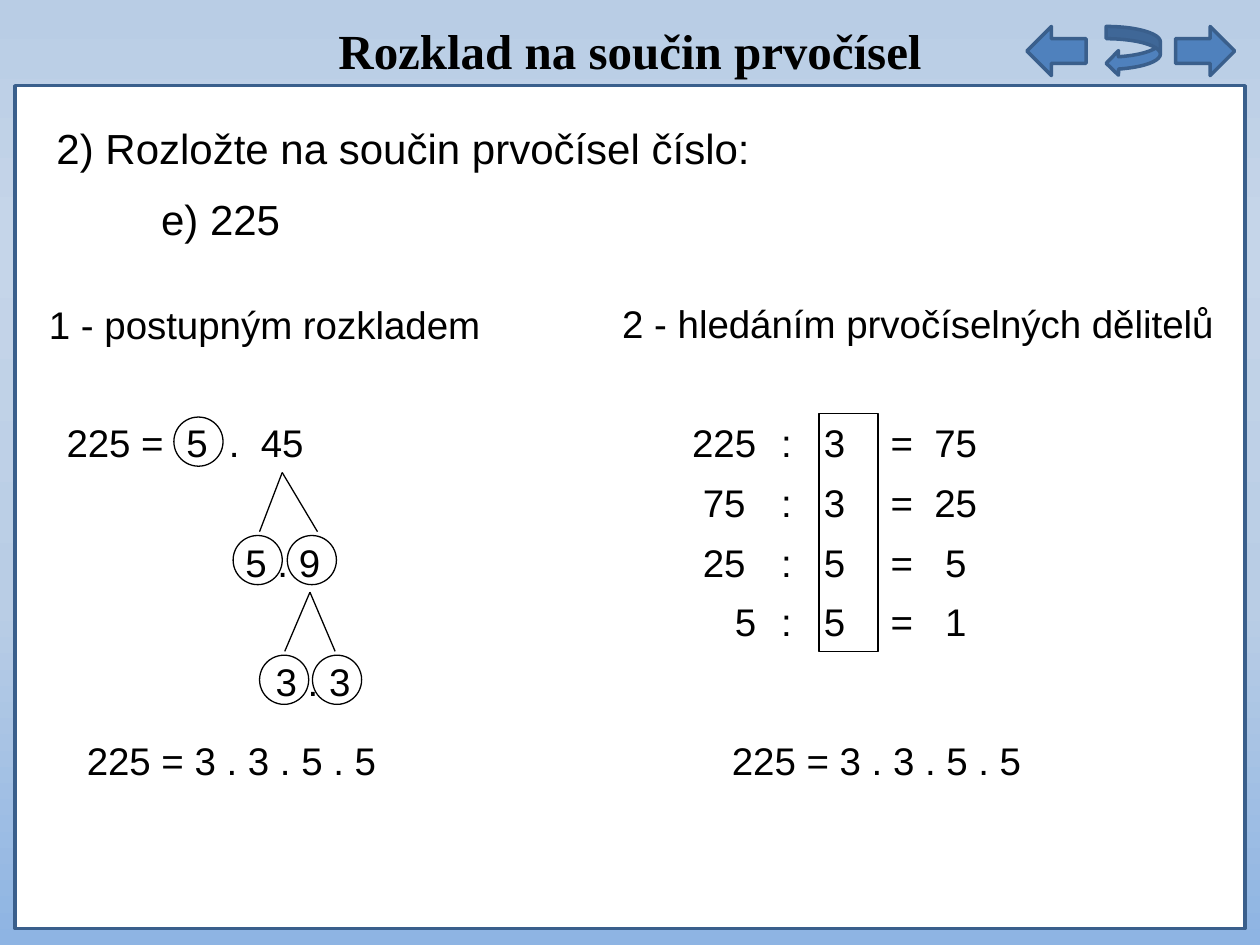
from copy import deepcopy
from pptx import Presentation
from pptx.dml.color import RGBColor
from pptx.enum.shapes import MSO_SHAPE as Kind, MSO_CONNECTOR as Conn
from pptx.enum.text import PP_ALIGN as Align, MSO_ANCHOR as Anchor, MSO_AUTO_SIZE as Auto
from pptx.oxml.ns import qn
from pptx.oxml.xmlchemy import OxmlElement
from pptx.util import Inches, Pt

rgb = RGBColor.from_string


def write(x, y, w, text, size=22, align=Align.LEFT, wrap=True):
    """Add a text box with one paragraph per line of text."""
    frame = slide.shapes.add_textbox(Inches(x), Inches(y), Inches(w), Inches(0.47)).text_frame
    frame.word_wrap = wrap
    frame.text = text
    for para in frame.paragraphs:
        para.alignment = align
        para.font.name, para.font.size = "Arial", Pt(size)
        para.font.color.rgb = rgb("000000")
    return frame


def draw(kind, x, y, w, h, fill=None, line="000000", weight=0.75):
    """Add a preset shape, unfilled unless a fill is given."""
    shape = slide.shapes.add_shape(kind, Inches(x), Inches(y), Inches(w), Inches(h))
    shape.shadow.inherit = False
    if fill:
        shape.fill.solid()
        shape.fill.fore_color.rgb = rgb(fill)
    else:
        shape.fill.background()
    shape.line.color.rgb = rgb(line)
    shape.line.width = Pt(weight)


deck = Presentation()
deck.slide_width, deck.slide_height = Inches(10), Inches(7.5)
slide = deck.slides.add_slide(deck.slide_layouts[5])

# Background gradient, top to bottom
back = slide.background.fill
back.gradient()
back.gradient_angle = 270
stops = slide.element.find(".//" + qn("a:gsLst"))
for _ in range(2):
    stops.append(deepcopy(stops[0]))
tones = [(0, "B9CDE5"), (0.25, "C5D5E9"), (0.64, "B9CDE5"), (1, "8EB4E3")]
for stop, (place, tone) in zip(back.gradient_stops, tones):
    stop.position = place
    stop.color.rgb = rgb(tone)

# Title
title = slide.shapes.title
title.left, title.top = Inches(0.12), Inches(0.11)
title.width, title.height = Inches(9.76), Inches(0.57)
frame = title.text_frame
frame.text = "Rozklad na součin prvočísel"
frame.auto_size = Auto.NONE
frame.vertical_anchor = Anchor.TOP
para = frame.paragraphs[0]
para.alignment = Align.CENTER
para.font.name, para.font.size, para.font.bold = "Times New Roman", Pt(28), True
para.font.color.rgb = rgb("000000")

# Panel and navigation arrows
draw(Kind.RECTANGLE, 0.12, 0.68, 9.76, 6.69, "FFFFFF", "3A5F8C", 2)
for kind, x, w in [(Kind.LEFT_ARROW, 8.15, 0.47), (Kind.CURVED_LEFT_ARROW, 8.78, 0.43),
                   (Kind.RIGHT_ARROW, 9.33, 0.47)]:
    draw(kind, x, 0.21, w, 0.39, "4F81BD", "3A5F8C", 2)

# Task
task = write(0.35, 0.92, 8.84, "2) Rozložte na součin prvočísel číslo:\ne) 225", 24)
task.paragraphs[0].space_after = Pt(12)
task.paragraphs[1]._p.get_or_add_pPr().set("marL", str(Inches(0.83)))

# Headings and results of both methods
write(0.29, 2.34, 5.12, "1 - postupným rozkladem")
write(4.84, 2.33, 4.96, "2 - hledáním prvočíselných dělitelů", wrap=False)
for x in (0.59, 5.71):
    write(x, 5.8, 2.99, "225 = 3 . 3 . 5 . 5")

# Method 1: factor tree
write(0.43, 3.28, 1.1, "225 =")
write(1.38, 3.28, 1.58, "5  .  45")
write(1.85, 4.23, 1.16, "5 . 9")
write(2.09, 5.17, 1.34, "3 . 3")
for x, y in [(1.38, 3.31), (1.85, 4.25), (2.28, 4.25), (2.06, 5.2), (2.48, 5.2)]:
    draw(Kind.OVAL, x, y, 0.39, 0.39)
for top, y, ends in [(2.24, 3.75, (2.06, 2.52)), (2.46, 4.7, (2.26, 2.66))]:
    for end in ends:
        branch = slide.shapes.add_connector(
            Conn.STRAIGHT, Inches(top), Inches(y), Inches(end), Inches(y + 0.47))
        branch.line.color.rgb = rgb("000000")
        branch.line.width = Pt(0.75)
        branch._element.spPr.append(OxmlElement("a:effectLst"))

# Method 2: repeated division, prime divisors framed
rows = [("225 ", "3 ", "=  75"), ("75 ", "3 ", "=  25"),
        ("25 ", "5 ", "=   5"), ("5", "5 ", "=   1")]
for i, (number, prime, rest) in enumerate(rows):
    y = 3.28 + i * 0.473
    write(5.31, y, 0.79, number, align=Align.RIGHT)
    write(6.1, y, 0.39, ":")
    write(6.1, y, 0.79, prime, align=Align.RIGHT)
    write(6.97, y, 1.18, rest)
draw(Kind.RECTANGLE, 6.5, 3.28, 0.47, 1.89)

deck.save("out.pptx")
